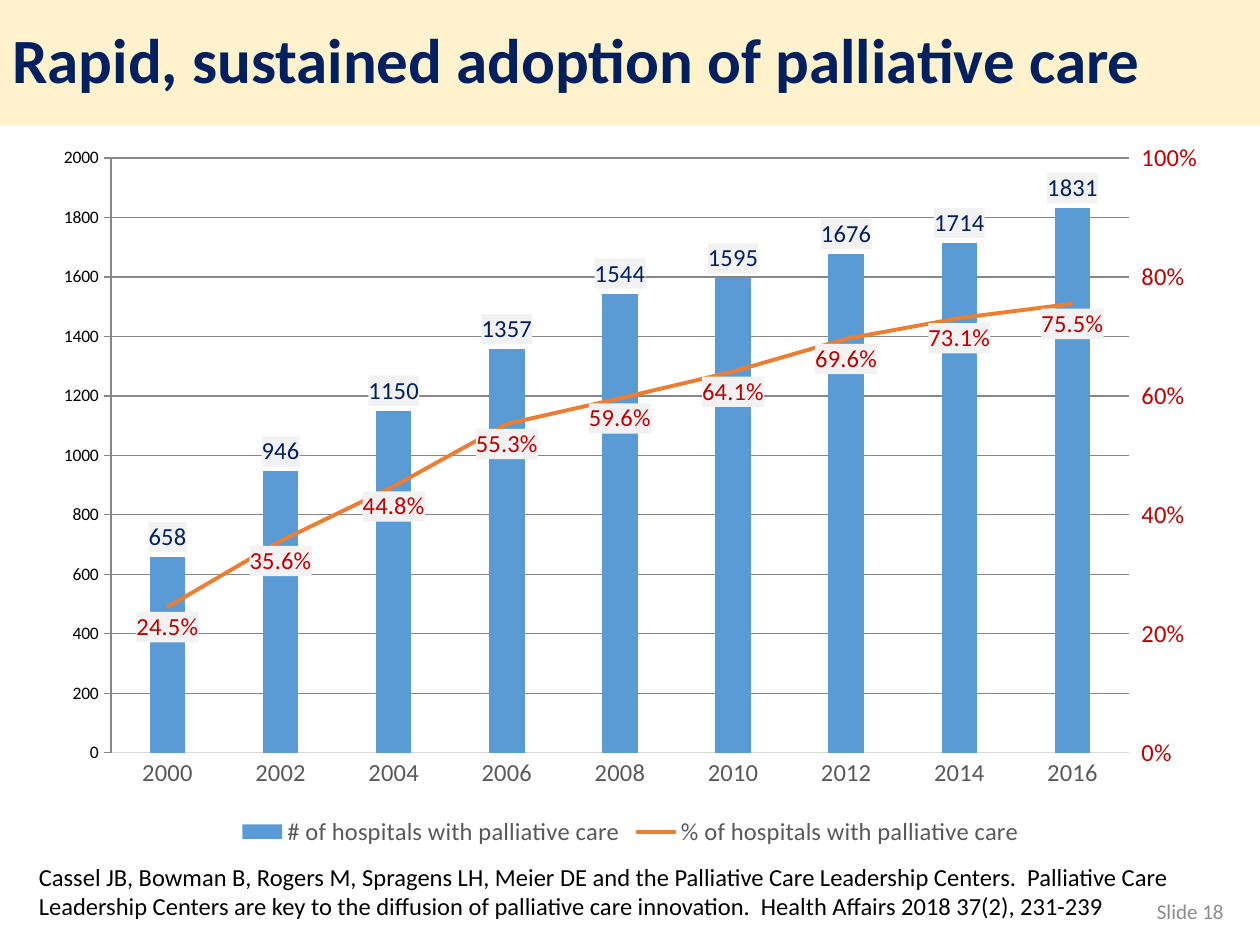
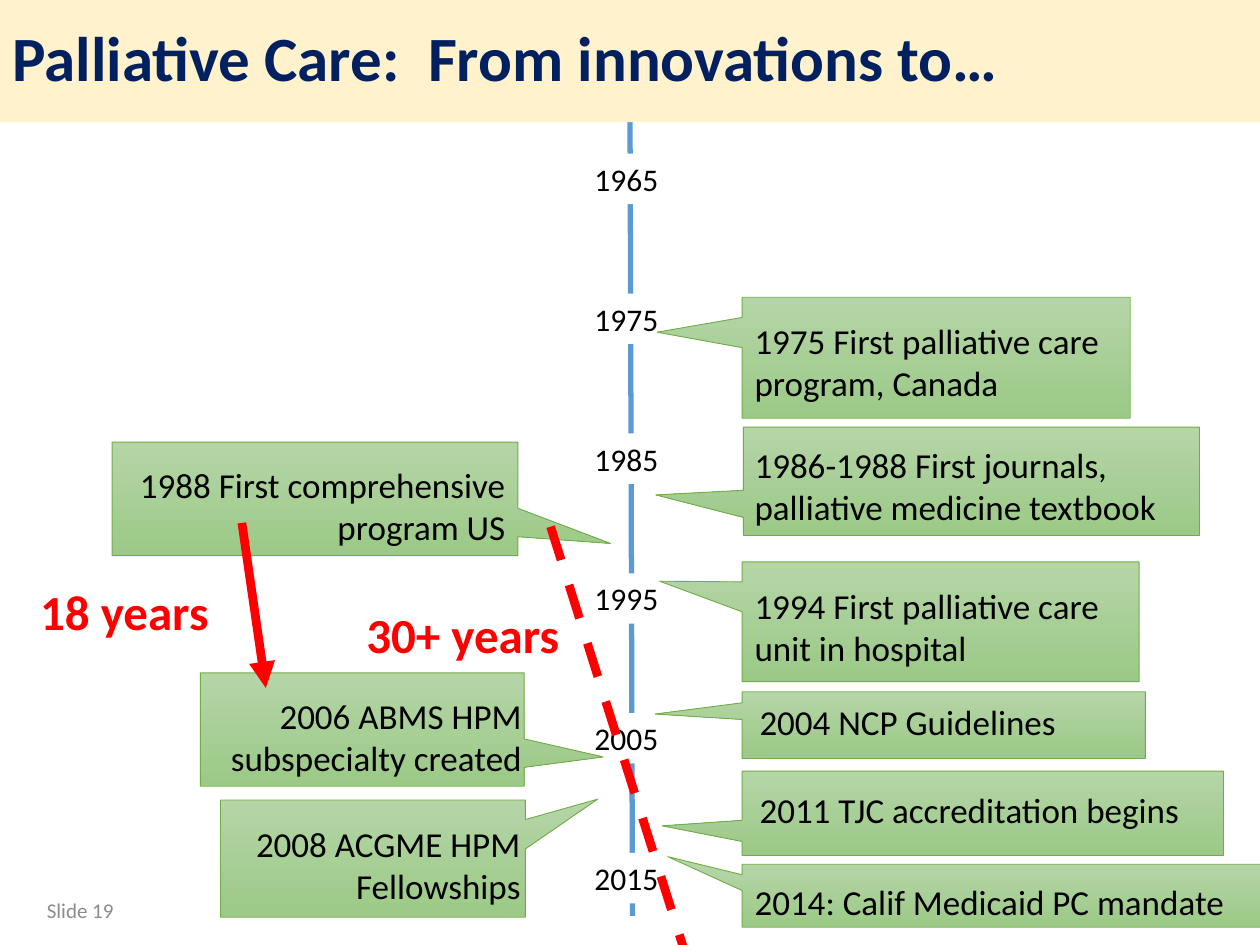
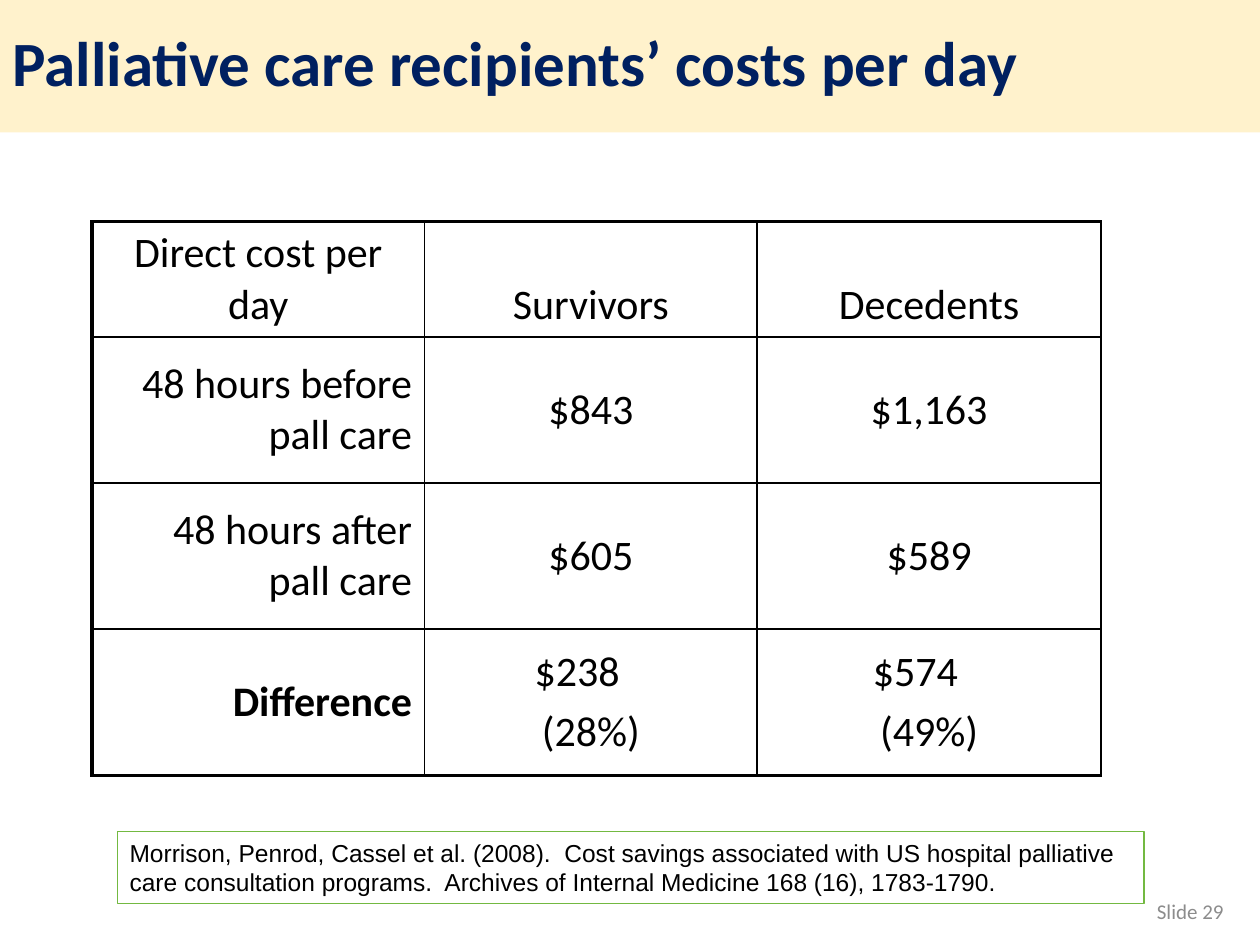
from dataclasses import dataclass

from lxml import etree
from pptx import Presentation
from pptx.chart.axis import ValueAxis
from pptx.chart.data import CategoryChartData
from pptx.dml.color import RGBColor
from pptx.enum.chart import (XL_CHART_TYPE, XL_LABEL_POSITION, XL_LEGEND_POSITION,
                             XL_MARKER_STYLE, XL_TICK_MARK)
from pptx.enum.dml import MSO_LINE
from pptx.enum.shapes import MSO_CONNECTOR, MSO_SHAPE
from pptx.enum.text import MSO_ANCHOR, PP_ALIGN
from pptx.oxml import parse_xml
from pptx.oxml.ns import nsdecls, qn
from pptx.util import Inches, Pt

LEFT, CENTER, RIGHT = PP_ALIGN.LEFT, PP_ALIGN.CENTER, PP_ALIGN.RIGHT
TOP, MIDDLE, BOTTOM = MSO_ANCHOR.TOP, MSO_ANCHOR.MIDDLE, MSO_ANCHOR.BOTTOM
RECTANGLE, CALLOUT = MSO_SHAPE.RECTANGLE, MSO_SHAPE.RECTANGULAR_CALLOUT
STRAIGHT = MSO_CONNECTOR.STRAIGHT
NO_TICK, OUTSIDE_TICK = XL_TICK_MARK.NONE, XL_TICK_MARK.OUTSIDE


@dataclass(frozen=True)
class Theme:
    font: str = "Calibri"
    source_font: str = "Arial"
    navy: str = "002060"
    cream: str = "FFF2CC"
    black: str = "000000"
    white: str = "FFFFFF"
    grey: str = "8C8C8C"
    chart_grey: str = "595959"
    axis_grey: str = "D9D9D9"
    label_grey: str = "F2F2F2"
    blue: str = "5B9BD5"
    orange: str = "ED7D31"
    dark_red: str = "C00000"
    red: str = "FF0000"
    light_green: str = "B5D5A7"
    mid_green: str = "9CC987"
    green: str = "70AD47"
    source_green: str = "73B941"
    title_size: float = 36
    span_size: float = 28
    table_size: float = 24
    event_size: float = 20
    year_size: float = 18
    small_size: float = 14
    number_size: float = 12


THEME = Theme()
NUMBER_BOX = (7.56, 7.03, 2.25, 0.4)

YEARS = [str(year) for year in range(2000, 2017, 2)]
HOSPITALS = [658, 946, 1150, 1357, 1544, 1595, 1676, 1714, 1831]
SHARES = [0.245, 0.356, 0.448, 0.553, 0.596, 0.641, 0.696, 0.731, 0.755]

# callout box, tip as a share of the box from its centre, text box, text
EVENTS_LEFT = [
    ((0.89, 3.51, 3.22, 0.9), (0.728, 0.393), (0.71, 3.63, 3.4, 1.48),
     "1988 First comprehensive program US"),
    ((1.75, 6.35, 2.42, 0.93), (0.737, -0.508), (1.23, 6.48, 3, 1.07),
     "2008 ACGME HPM Fellowships"),
    ((1.59, 5.34, 2.57, 0.9), (0.744, 0.242), (1.04, 5.46, 3.2, 1.48),
     "2006 ABMS HPM subspecialty created"),
]
EVENTS_RIGHT = [
    ((5.89, 6.86, 4.28, 0.5), (-0.638, -0.622), (5.89, 6.94, 4.15, 0.77),
     "2014: Calif Medicaid PC mandate"),
    ((5.89, 2.36, 3.08, 0.96), (-0.719, -0.211), (5.89, 2.49, 3.3, 2.07),
     "1975 First palliative care program, Canada"),
    ((5.9, 3.39, 3.62, 0.86), (-0.692, 0.126), (5.89, 3.47, 3.49, 1.41),
     "1986-1988 First journals, palliative medicine textbook"),
    ((5.89, 5.49, 3.2, 0.53), (-0.716, -0.165), (5.93, 5.51, 3.47, 0.44),
     "2004 NCP Guidelines"),
    ((5.89, 6.12, 3.82, 0.67), (-0.666, 0.149), (5.93, 6.21, 3.69, 0.77),
     "2011 TJC accreditation begins"),
    ((5.89, 4.46, 3.15, 0.95), (-0.708, -0.339), (5.89, 4.59, 3.43, 1.57),
     "1994 First palliative care unit in hospital"),
]

COSTS = [
    ["Direct cost per day", "Survivors", "Decedents"],
    ["48 hours before pall care", "$843", "$1,163"],
    ["48 hours after pall care", "$605", "$589"],
    ["Difference", "$238\n(28%)", "$574\n(49%)"],
]


def rgb(color):
    return RGBColor.from_string(color)


def inches(box):
    return [Inches(length) for length in box]


def format_font(font, size, color, bold=False, name=THEME.font):
    font.size, font.bold, font.name = Pt(size), bold, name
    font.color.rgb = rgb(color)


def write_text(frame, text, size=THEME.event_size, color=THEME.black, bold=False,
               font=THEME.font, align=LEFT, anchor=TOP, line_spacing=None, space_before=0):
    """Write one paragraph for each line of text."""
    frame.word_wrap = True
    frame.vertical_anchor = anchor
    for index, line in enumerate(text.split("\n")):
        para = frame.add_paragraph() if index else frame.paragraphs[0]
        para.alignment = align
        para.line_spacing = line_spacing
        para.space_before = Pt(space_before)
        span = para.add_run()
        span.text = line
        format_font(span.font, size, color, bold, font)


def add_text(shapes, box, text, **style):
    write_text(shapes.add_textbox(*inches(box)).text_frame, text, **style)


def add_box(shapes, box, kind=RECTANGLE, fill=None, line=None, width=0.5):
    shape = shapes.add_shape(kind, *inches(box))
    shape.shadow.inherit = False
    if fill:
        shape.fill.solid()
        shape.fill.fore_color.rgb = rgb(fill)
    else:
        shape.fill.background()
    if line:
        shape.line.color.rgb = rgb(line)
        shape.line.width = Pt(width)
    else:
        shape.line.fill.background()
    return shape


def add_line(shapes, start, end, color, width, dash=None, arrow=None):
    line = shapes.add_connector(STRAIGHT, *inches(start + end))
    line.line.color.rgb = rgb(color)
    line.line.width = Pt(width)
    if dash:
        line.line.dash_style = dash
    if arrow:
        outline = line._element.spPr.find(qn("a:ln"))
        etree.SubElement(outline, qn("a:tailEnd"), type=arrow)
    etree.SubElement(line._element.spPr, qn("a:effectLst"))


def add_title_band(page, text, height):
    band = add_box(page.shapes, (0, 0, 10, height), fill=THEME.cream)
    write_text(band.text_frame, text, size=THEME.title_size, color=THEME.navy, bold=True,
               anchor=MIDDLE, line_spacing=0.9)


def add_slide_number(page, number, box=NUMBER_BOX):
    add_text(page.shapes, box, f"Slide {number}", size=THEME.number_size, color=THEME.grey,
             align=RIGHT, anchor=MIDDLE)


def move_to_second_axis(chart):
    """Turn the last column series into a line on an axis at the right."""
    columns = chart._chartSpace.find(f".//{qn('c:barChart')}")
    series = columns.findall(qn("c:ser"))[-1]
    for setting in series.findall(qn("c:invertIfNegative")):
        series.remove(setting)
    line_chart = parse_xml(
        f'<c:lineChart {nsdecls("c")}><c:grouping val="standard"/><c:varyColors val="0"/>'
        '<c:marker val="1"/><c:axId val="5001"/><c:axId val="5002"/></c:lineChart>')
    line_chart.insert(2, series)
    columns.addnext(line_chart)
    value_axis = parse_xml(
        f'<c:valAx {nsdecls("c")}><c:axId val="5002"/>'
        '<c:scaling><c:orientation val="minMax"/></c:scaling><c:delete val="0"/>'
        '<c:axPos val="r"/><c:numFmt formatCode="0%" sourceLinked="0"/>'
        '<c:majorTickMark val="out"/><c:minorTickMark val="none"/><c:tickLblPos val="nextTo"/>'
        '<c:crossAx val="5001"/><c:crosses val="max"/></c:valAx>')
    category_axis = parse_xml(
        f'<c:catAx {nsdecls("c")}><c:axId val="5001"/>'
        '<c:scaling><c:orientation val="minMax"/></c:scaling><c:delete val="1"/>'
        '<c:axPos val="b"/><c:crossAx val="5002"/><c:crosses val="autoZero"/></c:catAx>')
    chart._chartSpace.find(f".//{qn('c:valAx')}").addnext(value_axis)
    value_axis.addnext(category_axis)
    return ValueAxis(value_axis)


def format_value_axis(axis, top, step, color, tick):
    axis.minimum_scale, axis.maximum_scale, axis.major_unit = 0, top, step
    axis.has_major_gridlines = False
    axis.major_tick_mark = tick
    axis.format.line.fill.background()
    format_font(axis.tick_labels.font, THEME.small_size, color)


def label_series(series, color, position, number_format):
    labels = series.data_labels
    labels.show_value = True
    labels.position = position
    labels.number_format = number_format
    labels.number_format_is_linked = False
    format_font(labels.font, THEME.small_size, color)
    labels._element.find(qn("c:txPr")).addprevious(parse_xml(
        f'<c:spPr {nsdecls("c", "a")}><a:solidFill>'
        f'<a:srgbClr val="{THEME.label_grey}"/></a:solidFill></c:spPr>'))


def add_adoption_chart(page, box):
    data = CategoryChartData()
    data.categories = YEARS
    data.add_series("# of hospitals with palliative care", HOSPITALS)
    data.add_series("% of hospitals with palliative care", SHARES, number_format="0.0%")
    chart = page.shapes.add_chart(XL_CHART_TYPE.COLUMN_CLUSTERED, *inches(box), data).chart
    format_font(chart.font, 10, THEME.black)
    chart.has_title = False
    chart.has_legend = True
    chart.legend.position = XL_LEGEND_POSITION.BOTTOM
    chart.legend.include_in_layout = False
    format_font(chart.legend.font, THEME.small_size, THEME.chart_grey)

    share_axis = move_to_second_axis(chart)
    format_value_axis(chart.value_axis, 2000, 200, THEME.navy, NO_TICK)
    format_value_axis(share_axis, 1, 0.2, THEME.dark_red, OUTSIDE_TICK)
    year_axis = chart.category_axis
    year_axis.major_tick_mark = NO_TICK
    year_axis.format.line.color.rgb = rgb(THEME.axis_grey)
    year_axis.format.line.width = Pt(0.75)
    format_font(year_axis.tick_labels.font, THEME.small_size, THEME.chart_grey)

    columns, lines = chart.plots
    columns.gap_width, columns.overlap = 219, -27
    columns.vary_by_categories = False
    hospitals, shares = columns.series[0], lines.series[0]
    hospitals.format.fill.solid()
    hospitals.format.fill.fore_color.rgb = rgb(THEME.blue)
    label_series(hospitals, THEME.navy, XL_LABEL_POSITION.OUTSIDE_END, "General")
    shares.format.line.color.rgb = rgb(THEME.orange)
    shares.format.line.width = Pt(2.25)
    shares.marker.style = XL_MARKER_STYLE.NONE
    shares.smooth = False
    label_series(shares, THEME.dark_red, XL_LABEL_POSITION.BELOW, "0.0%")


def add_event(page, box, tip, text_box, text, align):
    group = page.shapes.add_group_shape().shapes
    callout = add_box(group, box, CALLOUT, line=THEME.green)
    callout.adjustments[0], callout.adjustments[1] = tip
    callout.fill.gradient()
    callout.fill.gradient_angle = 270
    for stop, color in zip(callout.fill.gradient_stops, (THEME.light_green, THEME.mid_green)):
        stop.color.rgb = rgb(color)
    add_text(group, text_box, text, align=align)


def add_decades(page, box, step):
    left, top, width, height = box
    group = page.shapes.add_group_shape().shapes
    for index, year in enumerate(range(1965, 2016, 10)):
        label = add_box(group, (left, top + index * step, width, height), fill=THEME.white)
        write_text(label.text_frame, str(year), size=THEME.year_size)


def add_time_span(page, box, text, start, end, **line_style):
    add_line(page.shapes, start, end, THEME.red, 5, **line_style)
    add_text(page.shapes, box, text, size=THEME.span_size, color=THEME.red, bold=True)


def set_borders(cell, **widths):
    properties = cell._tc.get_or_add_tcPr()
    for index, side in enumerate("LRTB"):
        properties.insert(index, parse_xml(
            f'<a:ln{side} {nsdecls("a")} w="{Pt(widths.get(side, 1))}"><a:solidFill>'
            f'<a:srgbClr val="{THEME.black}"/></a:solidFill></a:ln{side}>'))


def add_cost_table(page, box, column_widths, row_heights):
    rows, columns = len(row_heights), len(column_widths)
    table = page.shapes.add_table(rows, columns, *inches(box)).table
    table.first_row = table.horz_banding = False
    for column, width in zip(table.columns, column_widths):
        column.width = Inches(width)
    for row, height in zip(table.rows, row_heights):
        row.height = Inches(height)
    for r, texts in enumerate(COSTS):
        for c, text in enumerate(texts):
            cell = table.cell(r, c)
            cell.fill.solid()
            cell.fill.fore_color.rgb = rgb(THEME.white)
            write_text(cell.text_frame, text, size=THEME.table_size, space_before=4.8,
                       bold=text == "Difference", align=RIGHT if r and not c else CENTER)
            cell.vertical_anchor = MIDDLE if r else BOTTOM
            outer = {"L": c == 0, "T": r == 0, "B": r == rows - 1}
            set_borders(cell, **{side: 2.25 for side, edge in outer.items() if edge})
            if "\n" in text:
                stagger_lines(cell, Inches(0.22))


def stagger_lines(cell, shift):
    """Centre the first line half a shift to the left of the second."""
    cell.margin_right = Inches(0.1) + shift
    properties = cell.text_frame.paragraphs[1]._p.get_or_add_pPr()
    properties.set("marL", str(int(shift)))
    properties.set("indent", "0")


def build_adoption(page):
    add_adoption_chart(page, (0.32, 1.02, 9.37, 5.74))
    add_title_band(page, "Rapid, sustained adoption of palliative care", 1)
    add_slide_number(page, 18)
    add_text(page.shapes, (0.21, 6.79, 9.37, 0.57),
             "Cassel JB, Bowman B, Rogers M, Spragens LH, Meier DE and the Palliative Care "
             "Leadership Centers.  Palliative Care Leadership Centers are key to the diffusion "
             "of palliative care innovation.  Health Affairs 2018 37(2), 231-239",
             size=THEME.small_size)


def build_timeline(page):
    add_line(page.shapes, (5, 0.87), (5.02, 7.27), THEME.blue, 3)
    add_decades(page, (4.62, 1.22, 0.77, 0.4), 1.11)
    add_title_band(page, "Palliative Care:  From innovations to…", 0.97)
    for events, align in ((EVENTS_LEFT, RIGHT), (EVENTS_RIGHT, LEFT)):
        for event in events:
            add_event(page, *event, align)
    add_slide_number(page, 19, (-1.25, 7.02, 2.25, 0.4))
    add_time_span(page, (2.81, 4.75, 1.91, 0.57), "30+ years", (4.37, 4.18), (5.78, 8.65),
                  dash=MSO_LINE.DASH, arrow="arrow")
    add_time_span(page, (0.22, 4.57, 1.91, 0.57), "18 years", (1.92, 4.15), (2.11, 5.46),
                  arrow="triangle")


def build_costs(page):
    add_title_band(page, "Palliative care recipients’ costs per day", 1.05)
    source = add_box(page.shapes, (0.93, 6.6, 8.15, 0.57), line=THEME.source_green, width=0.75)
    write_text(source.text_frame,
               "Morrison, Penrod, Cassel et al. (2008).  Cost savings associated with US "
               "hospital palliative care consultation programs.  Archives of Internal "
               "Medicine 168 (16), 1783-1790.",
               size=THEME.small_size, font=THEME.source_font)
    add_cost_table(page, (0.73, 1.76, 8.02, 4.39), (2.64, 2.64, 2.73), (0.89, 1.16, 1.16, 1.16))
    add_slide_number(page, 29)


def main():
    deck = Presentation()
    deck.slide_width, deck.slide_height = Inches(10), Inches(7.5)
    blank = deck.slide_layouts[6]
    for build in (build_adoption, build_timeline, build_costs):
        build(deck.slides.add_slide(blank))
    deck.save("out.pptx")


if __name__ == "__main__":
    main()
